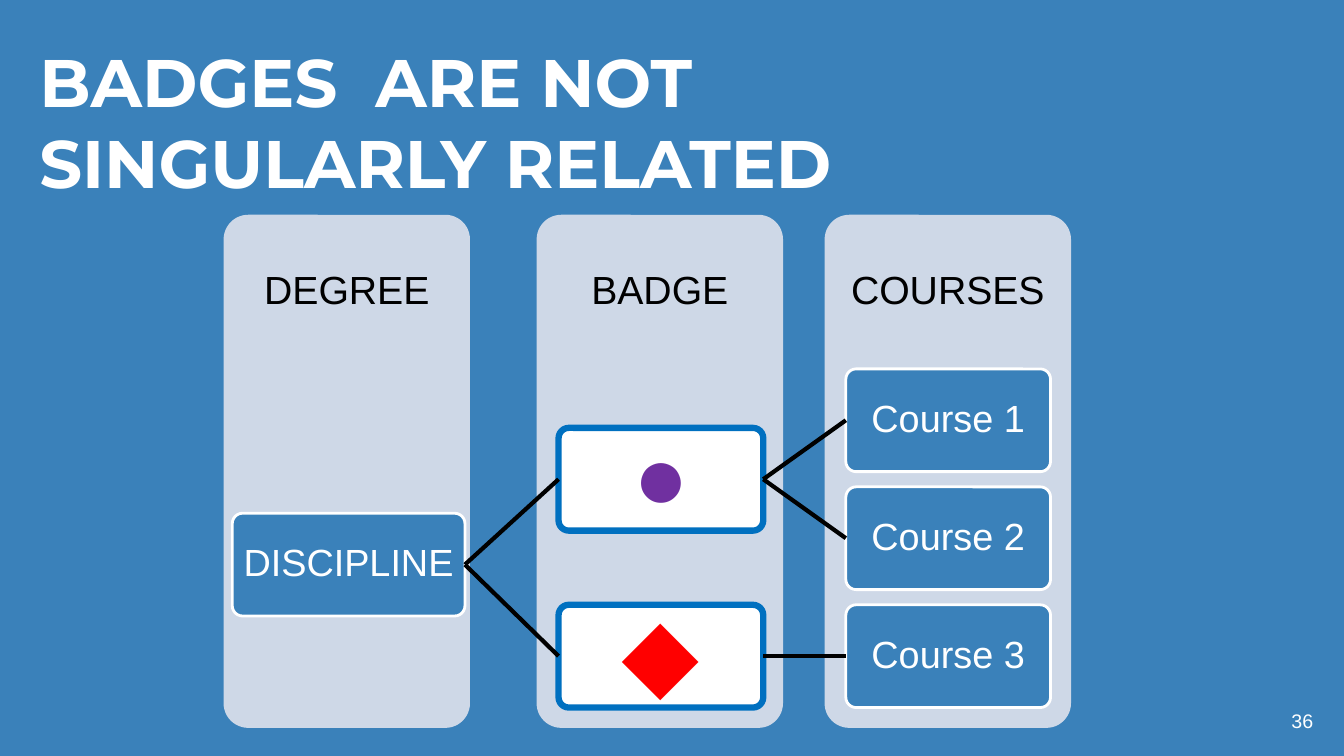
from lxml import etree
from pptx import Presentation
from pptx.dml.color import RGBColor
from pptx.enum.shapes import MSO_CONNECTOR, MSO_SHAPE
from pptx.enum.text import MSO_ANCHOR, PP_ALIGN
from pptx.oxml.ns import qn
from pptx.util import Pt

BLUE = RGBColor(0x3A, 0x81, 0xBA)
PALE = RGBColor(0xCE, 0xD8, 0xE7)
BORDER_BLUE = RGBColor(0x00, 0x70, 0xC0)
PURPLE = RGBColor(0x70, 0x30, 0xA0)
RED = RGBColor(0xFF, 0x00, 0x00)
WHITE = RGBColor(0xFF, 0xFF, 0xFF)
BLACK = RGBColor(0x00, 0x00, 0x00)
ROUNDED = MSO_SHAPE.ROUNDED_RECTANGLE
STRAIGHT = MSO_CONNECTOR.STRAIGHT
LEFT, CENTER = PP_ALIGN.LEFT, PP_ALIGN.CENTER
TOP, MIDDLE = MSO_ANCHOR.TOP, MSO_ANCHOR.MIDDLE
LEFT_SIDE, RIGHT_SIDE = 1, 3

BOX_WIDTH, BOX_HEIGHT = 146.2, 73.4
FIRST_COURSE_TOP, COURSE_STEP = 263.5, 84.25


class BadgeSlide:
    body_font = "Arial"
    title_font = "Montserrat"

    def __init__(self, slide):
        self.slide = slide
        background = slide.background.fill
        background.solid()
        background.fore_color.rgb = BLUE

    def add_lines(self, shape, lines, size, color, font=body_font, bold=False,
                  align=CENTER, anchor=MIDDLE, inset=1.5, spacing=0.9):
        frame = shape.text_frame
        frame.word_wrap = True
        frame.vertical_anchor = anchor
        frame.margin_left = frame.margin_right = Pt(inset)
        frame.margin_top = frame.margin_bottom = Pt(inset)
        for number, line in enumerate(lines):
            paragraph = frame.add_paragraph() if number else frame.paragraphs[0]
            paragraph.alignment = align
            paragraph.line_spacing = spacing
            run = paragraph.add_run()
            run.text = line
            run.font.name = font
            run.font.size = Pt(size)
            run.font.bold = bold
            run.font.color.rgb = color

    def text(self, left, top, width, height, lines, size, color, **style):
        box = self.slide.shapes.add_textbox(Pt(left), Pt(top), Pt(width), Pt(height))
        self.add_lines(box, lines, size, color, **style)

    def rounded(self, left, top, width, height, fill, border=None, weight=0):
        shape = self.slide.shapes.add_shape(
            ROUNDED, Pt(left), Pt(top), Pt(width), Pt(height))
        shape.shadow.inherit = False
        shape.adjustments[0] = 0.1
        shape.fill.solid()
        shape.fill.fore_color.rgb = fill
        if border is None:
            shape.line.fill.background()
        else:
            shape.line.color.rgb = border
            shape.line.width = Pt(weight)
        return shape

    def column(self, left, heading):
        self.rounded(left, 153.4, 176, 366.5, PALE)
        self.text(left, 153.4, 176, 110, [heading], 28, BLACK, inset=15.8)

    def label_box(self, left, top, width, label):
        box = self.rounded(left, top, width, BOX_HEIGHT, BLUE, WHITE, 2)
        self.add_lines(box, [label], 27, WHITE)
        return box

    def badge(self, top, symbol, size, color):
        box = self.rounded(399, top, BOX_WIDTH, BOX_HEIGHT, WHITE, BORDER_BLUE, 4.5)
        self.add_lines(box, [symbol], size, color, inset=4)
        return box

    def link(self, start, end):
        line = self.slide.shapes.add_connector(STRAIGHT, 0, 0, 0, 0)
        line.begin_connect(start, RIGHT_SIDE)
        line.end_connect(end, LEFT_SIDE)
        line.line.color.rgb = BLACK
        line.line.width = Pt(3)
        etree.SubElement(line._element.spPr, qn("a:effectLst"))


def main():
    deck = Presentation()
    deck.slide_width, deck.slide_height = Pt(960), Pt(540)
    page = BadgeSlide(deck.slides.add_slide(deck.slide_layouts[6]))

    # Columns
    for left, heading in ((589, "COURSES"), (383.3, "BADGE"), (159.7, "DEGREE")):
        page.column(left, heading)

    # Degree, badges and courses
    discipline = page.label_box(165.9, 366.6, 166.2, "DISCIPLINE")
    circle_badge = page.badge(FIRST_COURSE_TOP + COURSE_STEP / 2, "●", 66, PURPLE)
    diamond_badge = page.badge(FIRST_COURSE_TOP + COURSE_STEP * 2, "⬥", 80, RED)
    courses = [
        page.label_box(604.2, FIRST_COURSE_TOP + COURSE_STEP * row, BOX_WIDTH,
                       f"Course {row + 1}")
        for row in range(3)
    ]

    # Relations
    for start, end in (
        (discipline, circle_badge), (discipline, diamond_badge),
        (circle_badge, courses[0]), (circle_badge, courses[1]),
        (diamond_badge, courses[2]),
    ):
        page.link(start, end)

    # Title and page number
    page.text(21, 21.6, 832, 122, ["BADGES  ARE NOT", "SINGULARLY RELATED"], 48, WHITE,
              font=page.title_font, bold=True, align=LEFT, anchor=TOP,
              inset=7.2, spacing=1.0)
    page.text(909.4, 502.6, 41.8, 28.8, ["36"], 14, WHITE,
              anchor=TOP, inset=3.6, spacing=1.0)

    deck.save("out.pptx")


if __name__ == "__main__":
    main()
